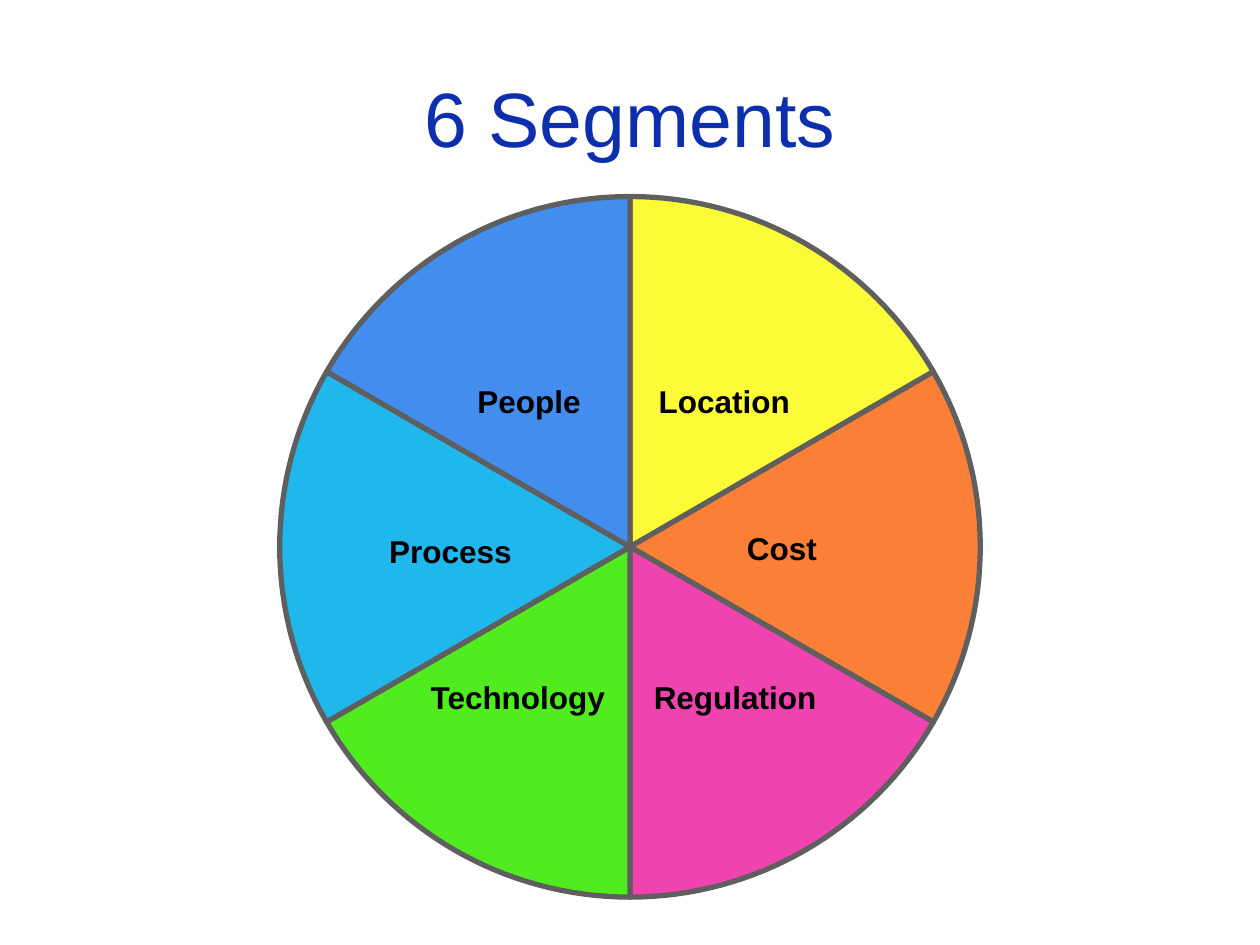
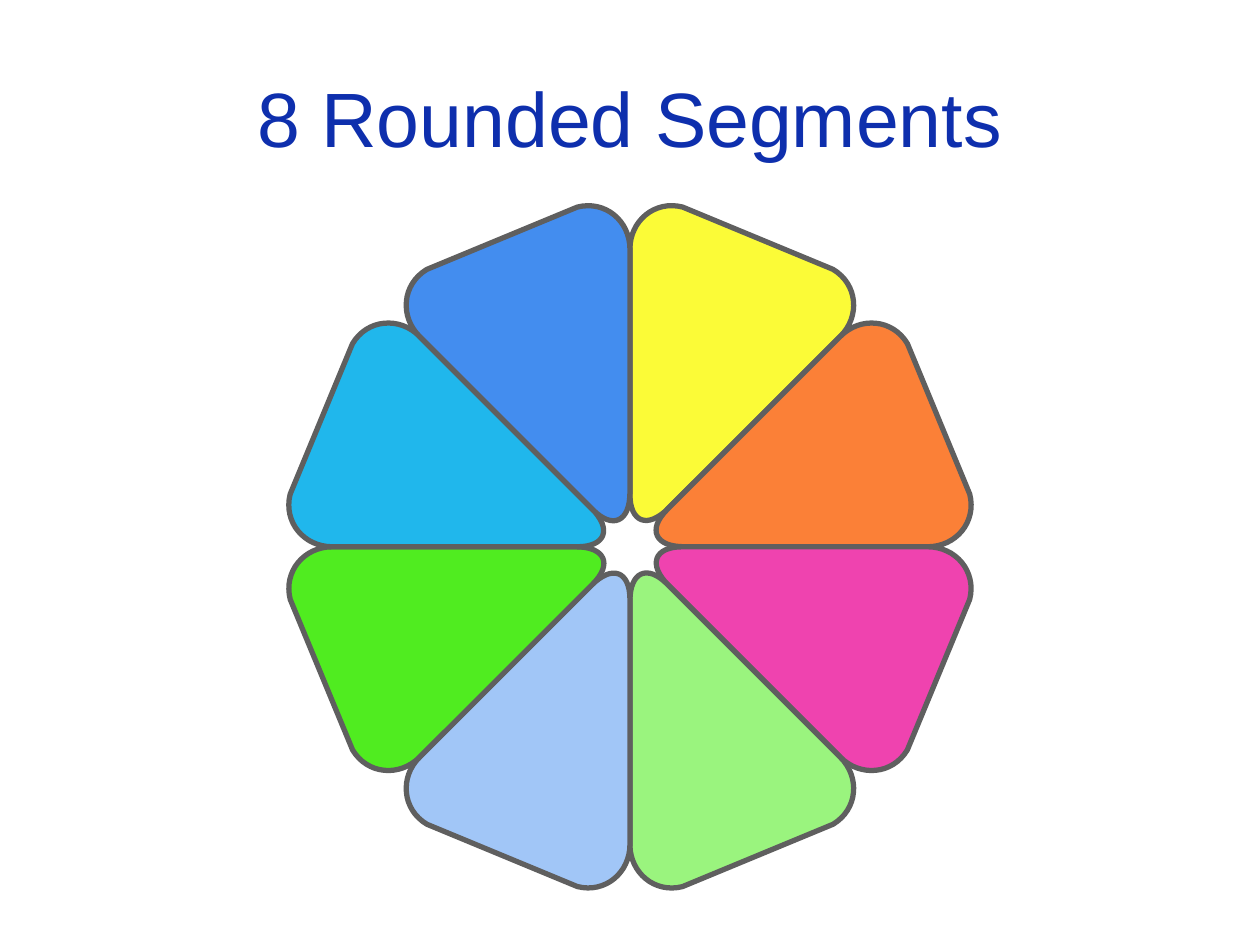
from math import cos, pi, sin

from pptx import Presentation
from pptx import util as u
from pptx.dml.color import RGBColor
from pptx.enum import text

FONT = "Arial"
COLORS = {
    "title": "0E2FAD", "label": "000000", "outline": "5F5F5F",
    "yellow": "FBFB37", "orange": "FB8037", "pink": "EF43AF",
    "green": "50EC20", "cyan": "20B7EC", "blue": "438DEF",
    "light_green": "9AF47E", "light_blue": "A1C6F7",
}
TITLE_BOX = (0.5, 0.3, 9, 1.25)
WHEEL_BOX = (2.22, 1.56, 5.56)  # left, top, diameter

# Clockwise from twelve o'clock: colour, label, label box (left, top, width) from the hub
SEGMENTS = [
    ("yellow", "Location", (0.13, -1.36, 1.24)),
    ("orange", "Cost", (0.83, -0.19, 0.76)),
    ("pink", "Regulation", (0.09, 0.99, 1.49)),
    ("green", "Technology", (-1.68, 0.99, 1.6)),
    ("cyan", "Process", (-2.01, -0.17, 1.17)),
    ("blue", "People", (-1.31, -1.36, 1.02)),
]
PETALS = ["yellow", "orange", "pink", "light_green",
          "light_blue", "green", "cyan", "blue"]

# Bezier control points for the corners of the first petal, as shares of the radius
OUTER_CORNER = [(0, -0.85), (0, -0.93), (0.07, -0.99), (0.15, -0.97)]
INNER_CORNER = [(0.11, -0.11), (0.05, -0.05), (0, -0.07), (0, -0.15)]


def rgb(name):
    return RGBColor.from_string(COLORS[name])


def style_run(r, size, color, bold=False):
    r.font.name, r.font.size, r.font.bold = FONT, u.Pt(size), bold
    r.font.color.rgb = rgb(color)


def rotate(point, angle):
    x, y = point
    return x * cos(angle) - y * sin(angle), x * sin(angle) + y * cos(angle)


def bezier(controls, steps=16):
    p0, p1, p2, p3 = controls
    for i in range(steps + 1):
        t = i / steps
        v = 1 - t
        yield tuple(v**3 * a + 3 * v * v * t * b + 3 * v * t * t * c + t**3 * d
                    for a, b, c, d in zip(p0, p1, p2, p3))


def wedge_outline(angle, steps=32):
    """Unit sector that starts at twelve o'clock and spans the angle."""
    return [(0, 0)] + [rotate((0, -1), angle * i / steps) for i in range(steps + 1)]


def petal_outline(angle):
    """Rounded unit triangle, symmetric about half the angle."""
    far_corner = [rotate((-x, y), angle) for x, y in reversed(OUTER_CORNER)]
    return [point for corner in (OUTER_CORNER, far_corner, INNER_CORNER)
            for point in bezier(corner)]


def add_title(s, words):
    sp = s.shapes.title
    sp.left, sp.top, sp.width, sp.height = map(u.Inches, TITLE_BOX)
    tf = sp.text_frame
    tf.vertical_anchor = text.MSO_ANCHOR.MIDDLE
    p = tf.paragraphs[0]
    p.alignment = text.PP_ALIGN.CENTER
    r = p.add_run()
    r.text = words
    style_run(r, 44, "title")


def add_wheel(s, box, colors, outline):
    """Turn one unit outline around the hub, once for each colour."""
    left, top, size = box
    radius = size / 2
    step = 2 * pi / len(colors)
    unit = outline(step)
    for i, color in enumerate(colors):
        turned = [rotate(point, i * step) for point in unit]
        points = [(u.Inches(left + radius * (1 + x)), u.Inches(top + radius * (1 + y)))
                  for x, y in turned]
        builder = s.shapes.build_freeform(*points[0])
        builder.add_line_segments(points[1:], close=True)
        sp = builder.convert_to_shape()
        sp.shadow.inherit = False
        sp.fill.solid()
        sp.fill.fore_color.rgb = rgb(color)
        sp.line.color.rgb = rgb("outline")
        sp.line.width = u.Pt(3)


def add_labels(s, box, segments):
    left, top, size = box
    for _, words, (dx, dy, width) in segments:
        sp = s.shapes.add_textbox(u.Inches(left + size / 2 + dx),
                                  u.Inches(top + size / 2 + dy),
                                  u.Inches(width), u.Inches(0.4))
        tf = sp.text_frame
        tf.word_wrap = False
        tf.auto_size = text.MSO_AUTO_SIZE.SHAPE_TO_FIT_TEXT
        r = tf.paragraphs[0].add_run()
        r.text = words
        style_run(r, 18, "label", bold=True)


def wheel_slide(prs, title, colors, outline):
    s = prs.slides.add_slide(prs.slide_layouts.get_by_name("Title Only"))
    add_title(s, title)
    add_wheel(s, WHEEL_BOX, colors, outline)
    return s


def main():
    prs = Presentation()
    prs.slide_width, prs.slide_height = u.Inches(10), u.Inches(7.5)
    s = wheel_slide(prs, "6 Segments", [color for color, *_ in SEGMENTS], wedge_outline)
    add_labels(s, WHEEL_BOX, SEGMENTS)
    wheel_slide(prs, "8 Rounded Segments", PETALS, petal_outline)
    prs.save("out.pptx")


if __name__ == "__main__":
    main()
